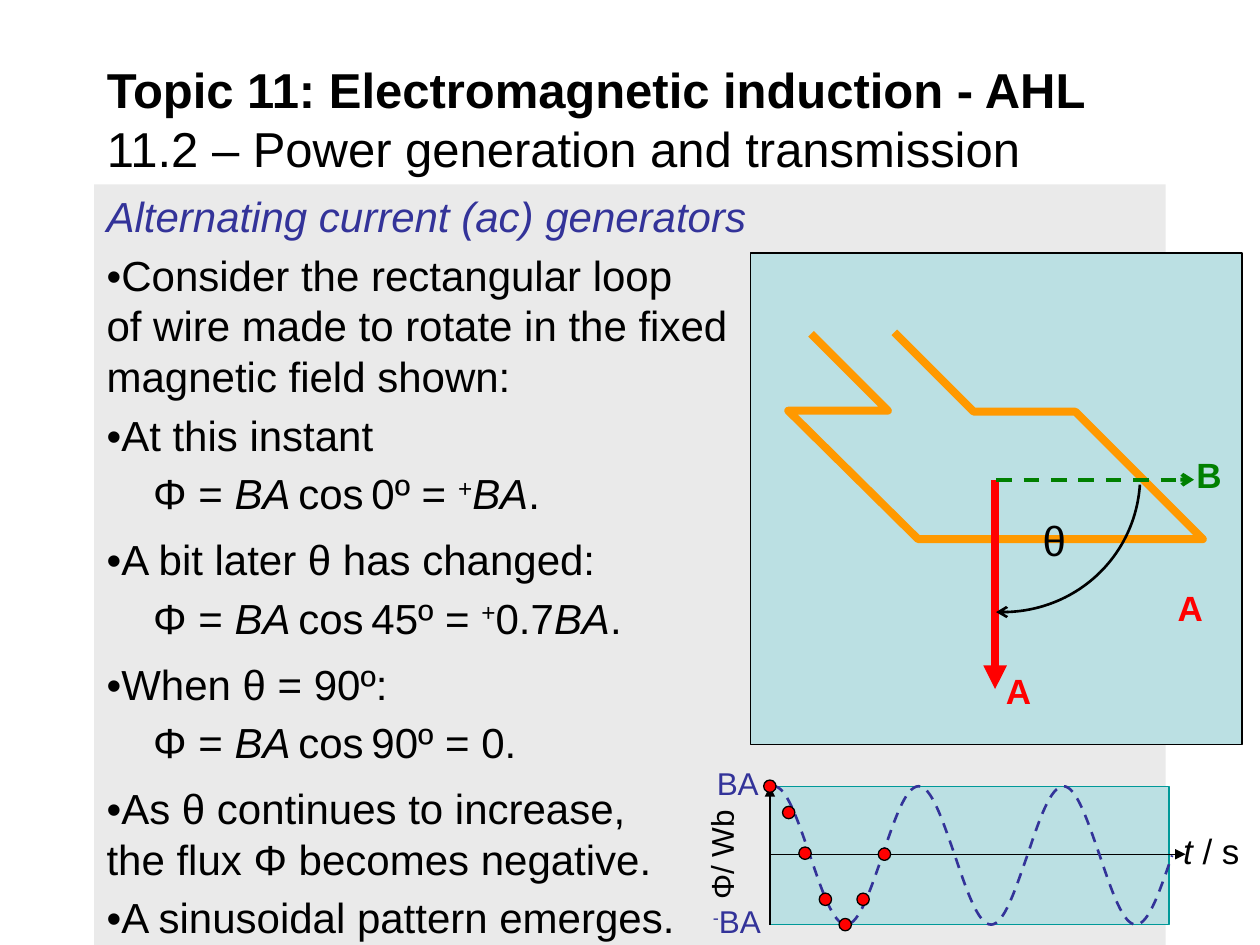
import lxml.etree
import pptx
import pptx.dml.color
import pptx.enum.dml
import pptx.enum.shapes
import pptx.enum.text
import pptx.oxml
import pptx.oxml.ns
import pptx.util
from pptx.util import Cm, Pt

DASH = pptx.enum.dml.MSO_LINE.DASH
SHAPES = pptx.enum.shapes.MSO_SHAPE
ALIGN = pptx.enum.text.PP_ALIGN
BLACK, RED, GREEN, ORANGE = "000000", "FF0000", "008000", "FF9900"
INDIGO, PALE_BLUE, TEAL, GREY = "333399", "BBE0E3", "009999", "EAEAEA"


def colour(hex_code):
    """Turn a hex string into a colour."""
    return pptx.dml.color.RGBColor.from_string(hex_code)


def add_xml(parent, tag, **attributes):
    """Append a drawing element with attributes."""
    return lxml.etree.SubElement(parent, pptx.oxml.ns.qn(tag), **attributes)


def style_line(item, hex_code, width, dash=None, head=None, tail=None):
    """Set the colour, width, dash and arrowheads of an outline."""
    item.line.color.rgb = colour(hex_code)
    item.line.width = Pt(width)
    if dash:
        item.line.dash_style = dash
    for tag, arrow in (("a:headEnd", head), ("a:tailEnd", tail)):
        if arrow:
            add_xml(item.line._get_or_add_ln(), tag, type=arrow)


def add_block(slide, kind, left, top, width, height, fill, outline=None):
    """Add a filled preset shape, sized in centimetres."""
    block = slide.shapes.add_shape(kind, Cm(left), Cm(top), Cm(width), Cm(height))
    block.shadow.inherit = False
    block.fill.solid()
    block.fill.fore_color.rgb = colour(fill)
    if outline:
        style_line(block, outline, 0.75)
    else:
        block.line.fill.background()
    return block


def add_line(slide, start, end, hex_code, width, **line_style):
    """Add a straight line between two points."""
    line = slide.shapes.add_connector(
        pptx.enum.shapes.MSO_CONNECTOR.STRAIGHT, *map(Cm, start + end))
    style_line(line, hex_code, width, **line_style)
    add_xml(line._element.spPr, "a:effectLst")


def add_path(slide, points, hex_code, width, **line_style):
    """Add an open, unfilled outline through points."""
    corners = [(Cm(x), Cm(y)) for x, y in points]
    builder = slide.shapes.build_freeform(*corners[0])
    builder.add_line_segments(corners[1:], close=False)
    path = builder.convert_to_shape()
    path.shadow.inherit = False
    path.fill.background()
    style_line(path, hex_code, width, **line_style)
    return path


def add_curve(slide, points, hex_code, width, **line_style):
    """Add an outline whose points after the first form cubic triples."""
    curve = add_path(slide, points, hex_code, width, **line_style)
    segments = list(curve._element.iter(pptx.oxml.ns.qn("a:lnTo")))
    outline = segments[0].getparent()
    for start in range(0, len(segments), 3):
        cubic = add_xml(outline, "a:cubicBezTo")
        for segment in segments[start:start + 3]:
            cubic.append(segment[0])
            outline.remove(segment)


def write(paragraph, runs, size, hex_code):
    """Fill a paragraph with (text, style) runs in one font."""
    paragraph.font.name = "Arial"
    paragraph.font.size = Pt(size)
    paragraph.font.color.rgb = colour(hex_code)
    for text, style in runs:
        for index, part in enumerate(text.split("\v")):
            if index:
                paragraph.add_line_break()
            run = paragraph.add_run()
            run.text = part
            if style == "italic":
                run.font.italic = True
            elif style == "bold":
                run.font.bold = True
            elif style == "narrow":
                run.font.size = Pt(16)
            elif style == "super":
                run._r.get_or_add_rPr().set("baseline", "30000")


def add_label(slide, left, top, width, height, runs, size, hex_code, spacing=None):
    """Add a one-line text box."""
    label = slide.shapes.add_textbox(Cm(left), Cm(top), Cm(width), Cm(height))
    label.text_frame.word_wrap = True
    paragraph = label.text_frame.paragraphs[0]
    paragraph.line_spacing = spacing
    write(paragraph, runs, size, hex_code)
    return label


def place_title(slide, left, top, width, height):
    """Place the two-line heading."""
    title = slide.shapes.title
    title.left, title.top, title.width, title.height = map(Cm, (left, top, width, height))
    frame = title.text_frame
    frame.auto_size = pptx.enum.text.MSO_AUTO_SIZE.NONE
    frame.vertical_anchor = pptx.enum.text.MSO_ANCHOR.MIDDLE
    heading = frame.paragraphs[0]
    heading.alignment = ALIGN.LEFT
    write(heading, [("Topic 11: Electromagnetic induction - AHL", "bold"),
                    ("\v11.2 – Power generation and transmission", "")], 28, BLACK)


def flux_equation(angle, *result):
    """Return the runs of a flux equation for an angle."""
    gap = (" ", "narrow")
    return [("Φ = ", ""), ("BA", "italic"), gap, ("cos", ""), gap,
            (f"{angle}º = ", ""), *result]


def place_notes(slide, left, top, width, height):
    """Place the grey panel with the explanation and its equations."""
    panel = add_block(slide, SHAPES.RECTANGLE, left, top, width, height, GREY)
    frame = panel.text_frame
    frame.vertical_anchor = pptx.enum.text.MSO_ANCHOR.TOP
    plus, product, stop = ("+", "super"), ("BA", "italic"), (".", "")
    entries = [
        ("heading", [("Alternating current (ac) generators", "italic")]),
        ("point", [("•Consider the rectangular loop\vof wire made to rotate in the fixed"
                    "\vmagnetic field shown:", "")]),
        ("point", [("•At this instant", "")]),
        ("equation", flux_equation(0, plus, product, stop)),
        ("point", [("•A bit later θ has changed:", "")]),
        ("equation", flux_equation(45, plus, ("0.7", ""), product, stop)),
        ("point", [("•When θ = 90º:", "")]),
        ("equation", flux_equation(90, ("0.", ""))),
        ("point", [("•As θ continues to increase,\vthe flux Φ becomes negative.", "")]),
        ("point", [("•A sinusoidal pattern emerges.", "")]),
    ]
    for index, (role, runs) in enumerate(entries):
        paragraph = frame.add_paragraph() if index else frame.paragraphs[0]
        paragraph.alignment = ALIGN.LEFT
        paragraph.space_before = Pt(4.8)
        if role == "equation":
            paragraph.space_after = Pt(4)
            paragraph._p.get_or_add_pPr().set("marL", str(Cm(0.94)))
        write(paragraph, runs, 24, INDIGO if role == "heading" else BLACK)


def place_loop(slide, left, top, side):
    """Place the wire loop with its area and field vectors."""
    def at(x, y):
        return left + x, top + y

    add_block(slide, SHAPES.RECTANGLE, left, top, side, side, PALE_BLUE, BLACK)
    wire = [(2.9, 1.6), (4.5, 3.2), (6.55, 3.2), (9.12, 5.77),
            (3.38, 5.77), (0.76, 3.18), (2.77, 3.18), (1.22, 1.63)]
    add_path(slide, [at(*corner) for corner in wire], ORANGE, 4.5)
    add_line(slide, at(4.93, 5.84), at(4.93, 8.79), RED, 4.5, tail="triangle")
    add_line(slide, at(4.93, 5.84), at(4.93, 4.57), RED, 4.5)
    add_line(slide, at(4.95, 4.57), at(8.94, 4.57), GREEN, 2.25, dash=DASH, tail="arrow")
    arc = [(4.95, 7.24), (5, 7.24), (5.03, 7.24), (5.08, 7.24),
           (6.53, 7.24), (7.75, 6.12), (7.85, 4.67)]
    add_curve(slide, [at(*point) for point in arc], BLACK, 1.5, head="arrow")
    add_label(slide, *at(5.64, 5.26), 1.19, 1.04, [("θ", "")], 24, BLACK, 0.9)
    for name, x, y, hex_code in (("A", 4.9, 8.28, RED), ("B", 8.74, 3.91, GREEN),
                                 ("A", 8.36, 6.6, RED)):
        vector = add_label(slide, *at(x, y), 1.02, 1.09, [(name, "bold")], 20, hex_code)
        vector.text_frame.word_wrap = False


def place_graph(slide, left, top, width, height):
    """Place the flux against time graph."""
    def at(x, y):
        return left + x, top + y

    add_block(slide, SHAPES.RECTANGLE, left, top, width, height, PALE_BLUE, TEAL)
    add_line(slide, at(0, 1.37), at(8.38, 1.37), BLACK, 0.75, tail="triangle")
    add_line(slide, at(0, height), at(0, 0), BLACK, 0.75, tail="triangle")
    add_label(slide, *at(-1.32, -0.58), 1.73, 1.02, [("BA", "")], 18, INDIGO)
    add_label(slide, *at(-1.4, 2.21), 1.73, 1.02, [("-", "super"), ("BA", "")], 18, INDIGO)
    add_label(slide, *at(8.08, 0.84), 2.11, 1.04,
              [("t ", "italic"), ("/ s", "")], 20, BLACK, 0.9)
    flux = add_label(slide, *at(-2.62, 0.91), 3.38, 0.94, [("Φ/ Wb", "")], 18, BLACK, 0.9)
    flux.text_frame.paragraphs[0].alignment = ALIGN.CENTER
    flux.rotation = 270
    quarter, middle = 0.73, height / 2
    falling = [(0.36, 1), (0.67, 0.49), (1, 0)]
    rising = [(0.33, -0.51), (0.64, -1), (1, -1)]
    wave = [at(0.08, 0)]
    for n in range(11):
        sign = 1 if n % 4 < 2 else -1
        wave += [at(0.08 + quarter * (n + x), middle * (1 - sign * y))
                 for x, y in (rising if n % 2 else falling)]
    add_curve(slide, wave, INDIGO, 1.5, dash=DASH)
    dot = 0.25
    for x, y in ((0, 0), (0.38, 0.53), (0.71, 1.35), (1.12, 2.28),
                 (1.52, 2.79), (1.88, 2.28), (2.31, 1.37)):
        add_block(slide, SHAPES.OVAL, *at(x - dot / 2, y - dot / 2), dot, dot, RED, BLACK)


deck = pptx.Presentation()
deck.slide_width, deck.slide_height = Cm(25.4), Cm(19.05)
generator = deck.slides.add_slide(deck.slide_layouts[5])
place_title(generator, 1.9, 1.14, 21.6, 2.49)
place_notes(generator, 1.9, 3.72, 21.6, 15.33)
place_graph(generator, 15.52, 15.85, 8.05, 2.79)
place_loop(generator, 15.13, 5.1, 9.91)
deck.save("out.pptx")
